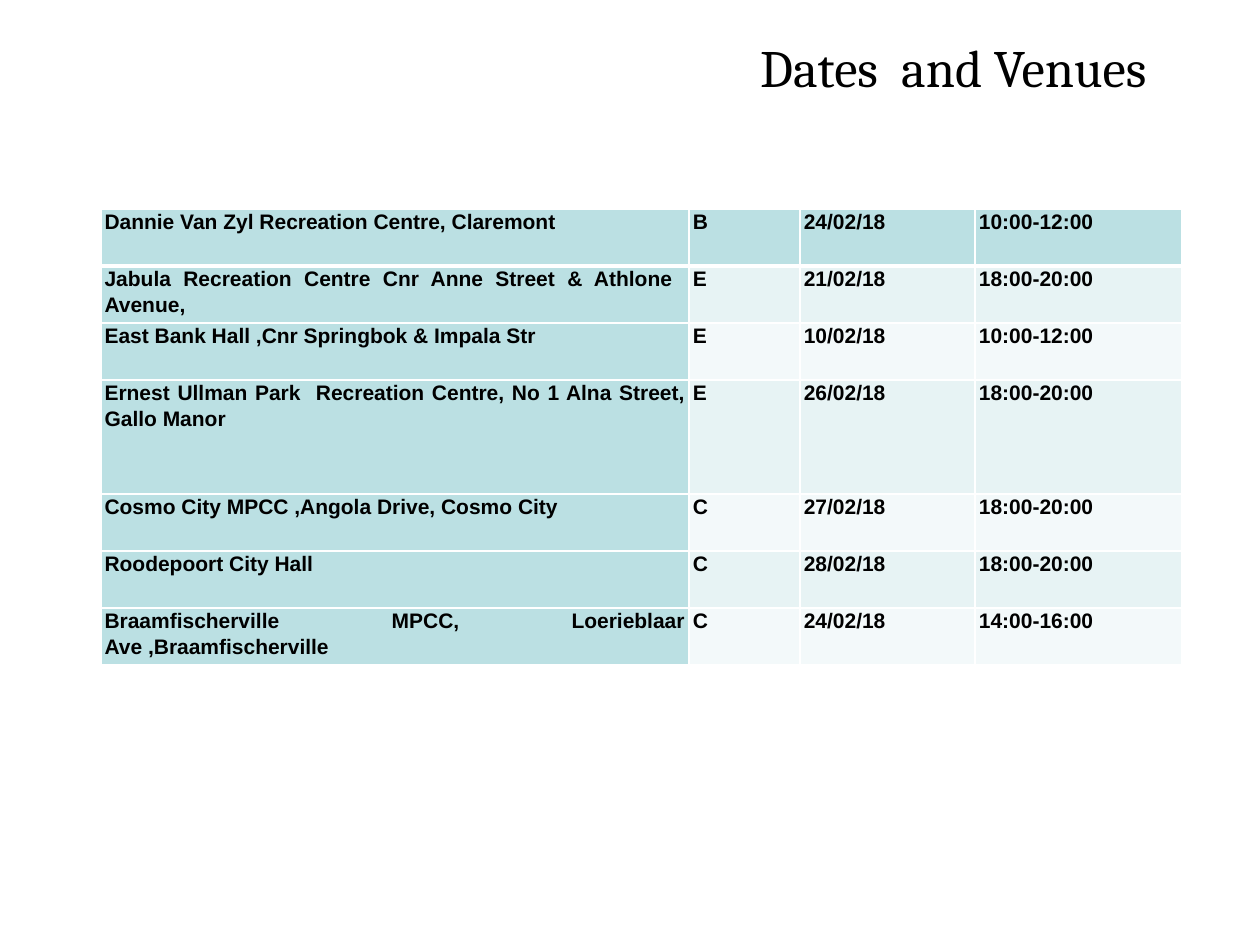
from typing import NamedTuple

from lxml.etree import SubElement
from pptx import Presentation
from pptx.dml.color import RGBColor
from pptx.enum.text import MSO_ANCHOR, PP_ALIGN
from pptx.oxml.ns import qn
from pptx.util import Inches, Pt

BLACK = RGBColor(0x00, 0x00, 0x00)
WHITE = RGBColor(0xFF, 0xFF, 0xFF)
TEAL = RGBColor(0xBB, 0xE0, 0xE3)
LIGHT_TEAL = RGBColor(0xE7, 0xF3, 0xF4)
PALE_TEAL = RGBColor(0xF3, 0xF9, 0xFA)

TABLE_HEIGHT = 3.62
COLUMN_WIDTHS = (4.67, 0.88, 1.39, 1.64)

TITLE_FONT = {"name": "Cambria", "size": Pt(30), "bold": False}
CELL_FONT = {"name": "Arial", "size": Pt(12), "bold": True}
TITLE_FRAME = {"word_wrap": True, "vertical_anchor": MSO_ANCHOR.BOTTOM}
TITLE_PARAGRAPH = {"alignment": PP_ALIGN.RIGHT}
CELL_PARAGRAPH = {
    "alignment": PP_ALIGN.JUSTIFY,
    "line_spacing": 1.07,
    "space_after": Pt(8),
}
CELL_MARGINS = {
    "margin_left": Inches(0.03),
    "margin_right": Inches(0.03),
    "margin_top": 0,
    "margin_bottom": 0,
}
TABLE_FLAGS = {"first_row": False, "horz_banding": False}


class Meeting(NamedTuple):
    venue: str
    region: str
    date: str
    time: str


MEETINGS = (
    Meeting("Dannie Van Zyl Recreation Centre, Claremont ", "B", "24/02/18", "10:00-12:00"),
    Meeting("Jabula Recreation Centre Cnr Anne Street & Athlone  Avenue, ", "E", "21/02/18", "18:00-20:00"),
    Meeting("East Bank Hall ,Cnr Springbok & Impala Str", "E", "10/02/18", "10:00-12:00"),
    Meeting("Ernest Ullman Park  Recreation Centre, No 1 Alna Street, Gallo Manor ", "E ", "26/02/18", "18:00-20:00"),
    Meeting("Cosmo City MPCC ,Angola Drive, Cosmo City", "C", "27/02/18", "18:00-20:00"),
    Meeting("Roodepoort City Hall", "C", "28/02/18", "18:00-20:00"),
    Meeting("Braamfischerville MPCC, Loerieblaar Ave ,Braamfischerville", "C", "24/02/18", "14:00-16:00"),
)
ROW_UNITS = (1, 1, 1, 2, 1, 1, 1)


def apply_format(target, values: dict) -> None:
    for name, value in values.items():
        setattr(target, name, value)


def write_text(text_frame, text: str, paragraph_format: dict, font_format: dict) -> None:
    paragraph = text_frame.paragraphs[0]
    apply_format(paragraph, paragraph_format)
    run = paragraph.add_run()
    run.text = text
    apply_format(run.font, font_format)
    run.font.color.rgb = BLACK


def set_borders(cell, widths: dict) -> None:
    properties = cell._tc.get_or_add_tcPr()
    for side, width in widths.items():
        line = SubElement(properties, qn(f"a:ln{side}"), w=str(Pt(width)))
        fill = SubElement(line, qn("a:solidFill"))
        SubElement(fill, qn("a:srgbClr"), val=str(WHITE))


def cell_color(row: int, column: int) -> RGBColor:
    if row == 0 or column == 0:
        return TEAL
    return LIGHT_TEAL if row % 2 else PALE_TEAL


def add_title(slide, text: str) -> None:
    shape = slide.shapes.add_textbox(Inches(1.05), Inches(0.45), Inches(8.24), Inches(0.38))
    apply_format(shape.text_frame, TITLE_FRAME)
    write_text(shape.text_frame, text, TITLE_PARAGRAPH, TITLE_FONT)


def add_meeting_table(slide, meetings: tuple[Meeting, ...]) -> None:
    table = slide.shapes.add_table(
        len(meetings), len(COLUMN_WIDTHS),
        Inches(0.8), Inches(1.66), Inches(sum(COLUMN_WIDTHS)), Inches(TABLE_HEIGHT),
    ).table
    apply_format(table, TABLE_FLAGS)
    for column, width in zip(table.columns, COLUMN_WIDTHS):
        column.width = Inches(width)
    for row, units in zip(table.rows, ROW_UNITS):
        row.height = Inches(TABLE_HEIGHT * units / sum(ROW_UNITS))
    for row_index, meeting in enumerate(meetings):
        borders = {
            "L": 1,
            "R": 1,
            "T": 3 if row_index == 1 else 1,
            "B": 3 if row_index == 0 else 1,
        }
        for column_index, text in enumerate(meeting):
            cell = table.cell(row_index, column_index)
            apply_format(cell, CELL_MARGINS)
            set_borders(cell, borders)
            cell.fill.solid()
            cell.fill.fore_color.rgb = cell_color(row_index, column_index)
            write_text(cell.text_frame, text, CELL_PARAGRAPH, CELL_FONT)


def main() -> None:
    presentation = Presentation()
    presentation.slide_width = Inches(10)
    presentation.slide_height = Inches(7.5)
    slide = presentation.slides.add_slide(presentation.slide_layouts[6])
    add_title(slide, "Dates  and Venues ")
    add_meeting_table(slide, MEETINGS)
    presentation.save("out.pptx")


if __name__ == "__main__":
    main()
